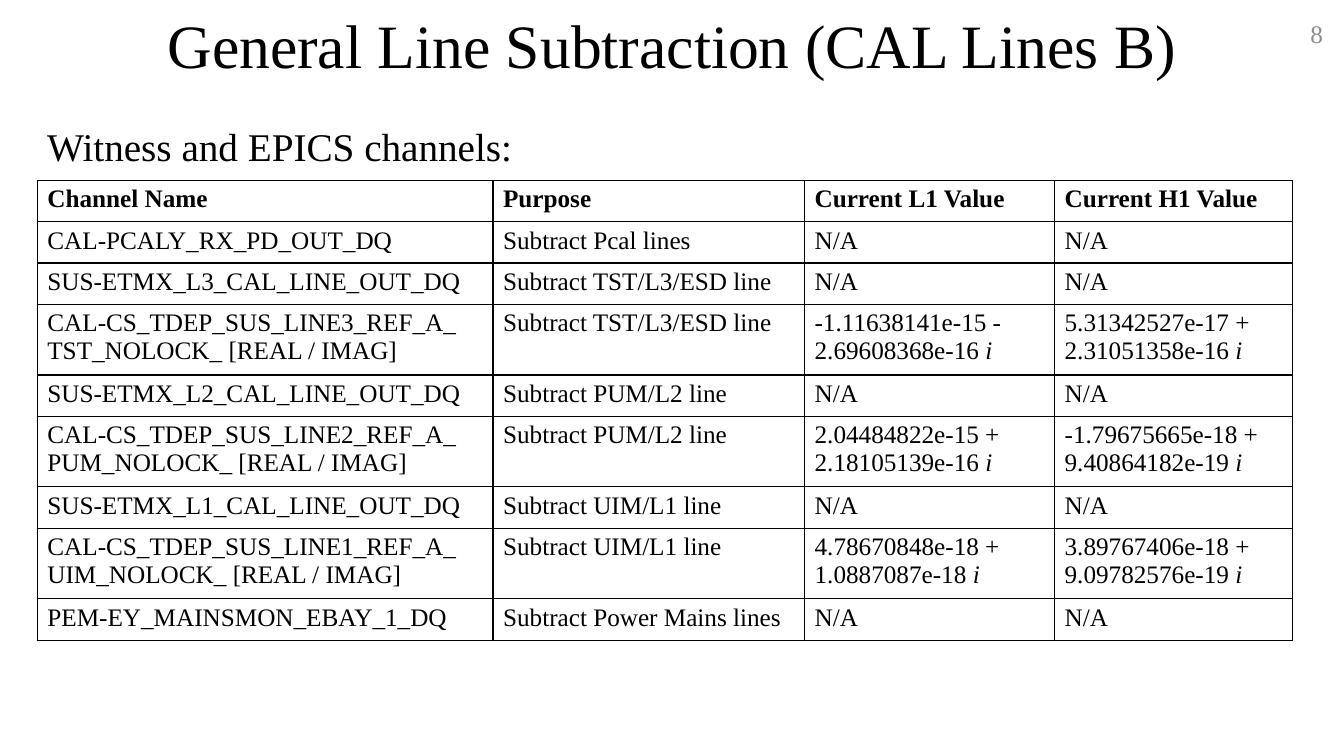
from lxml import etree
from pptx import Presentation
from pptx.dml.color import RGBColor
from pptx.enum.text import MSO_ANCHOR, PP_ALIGN
from pptx.oxml.ns import qn
from pptx.util import Inches, Pt

TOP, MIDDLE = MSO_ANCHOR.TOP, MSO_ANCHOR.MIDDLE
LEFT, CENTER, RIGHT = PP_ALIGN.LEFT, PP_ALIGN.CENTER, PP_ALIGN.RIGHT
FONT = "Times New Roman"
COLORS = {"text": "000000", "number": "8C8C8C", "border": "000000"}

COLUMN_WIDTHS = [4.52, 3.09, 2.48, 2.36]
ROW_HEIGHT = 0.41
IMAGINARY = " i"
NA = "N/A"
CHANNELS = [
    ("Channel Name", "Purpose", "Current L1 Value", "Current H1 Value"),
    ("CAL-PCALY_RX_PD_OUT_DQ", "Subtract Pcal lines", NA, NA),
    ("SUS-ETMX_L3_CAL_LINE_OUT_DQ", "Subtract TST/L3/ESD line", NA, NA),
    ("CAL-CS_TDEP_SUS_LINE3_REF_A_\nTST_NOLOCK_ [REAL / IMAG]",
     "Subtract TST/L3/ESD line",
     "-1.11638141e-15 - 2.69608368e-16 i", "5.31342527e-17 + 2.31051358e-16 i"),
    ("SUS-ETMX_L2_CAL_LINE_OUT_DQ", "Subtract PUM/L2 line", NA, NA),
    ("CAL-CS_TDEP_SUS_LINE2_REF_A_\nPUM_NOLOCK_ [REAL / IMAG]",
     "Subtract PUM/L2 line",
     "2.04484822e-15 + 2.18105139e-16 i", "-1.79675665e-18 + 9.40864182e-19 i"),
    ("SUS-ETMX_L1_CAL_LINE_OUT_DQ", "Subtract UIM/L1 line", NA, NA),
    ("CAL-CS_TDEP_SUS_LINE1_REF_A_\nUIM_NOLOCK_ [REAL / IMAG]",
     "Subtract UIM/L1 line",
     "4.78670848e-18 + 1.0887087e-18 i", "3.89767406e-18 + 9.09782576e-19 i"),
    ("PEM-EY_MAINSMON_EBAY_1_DQ", "Subtract Power Mains lines", NA, NA),
]


def add_run(p, text, size, color="text", bold=False, italic=False):
    r = p.add_run()
    r.text = text
    r.font.name = FONT
    r.font.size = Pt(size)
    r.font.bold = bold
    r.font.italic = italic
    r.font.color.rgb = RGBColor.from_string(COLORS[color])


def add_text(slide, box, text, size, color="text", align=LEFT, anchor=TOP, spacing=0.9):
    sp = slide.shapes.add_textbox(*map(Inches, box))
    tf = sp.text_frame
    tf.word_wrap = True
    tf.vertical_anchor = anchor
    p = tf.paragraphs[0]
    p.alignment = align
    p.line_spacing = spacing
    add_run(p, text, size, color)


def set_borders(cell):
    tc_pr = cell._tc.get_or_add_tcPr()
    for i, side in enumerate(("lnL", "lnR", "lnT", "lnB")):
        ln = etree.Element(qn(f"a:{side}"), w=str(Pt(1)))
        fill = etree.SubElement(ln, qn("a:solidFill"))
        etree.SubElement(fill, qn("a:srgbClr"), val=COLORS["border"])
        tc_pr.insert(i, ln)


def fill_cell(cell, text, bold):
    """Write one paragraph per line, with a closing imaginary unit in italics."""
    cell.fill.background()
    set_borders(cell)
    tf = cell.text_frame
    for i, line in enumerate(text.split("\n")):
        p = tf.add_paragraph() if i else tf.paragraphs[0]
        if line.endswith(IMAGINARY):
            add_run(p, line[:-1], 18)
            add_run(p, "i", 18, italic=True)
        else:
            add_run(p, line, 18, bold=bold)


def add_channel_table(slide, left, top):
    width, height = sum(COLUMN_WIDTHS), ROW_HEIGHT * len(CHANNELS)
    table = slide.shapes.add_table(
        len(CHANNELS), len(COLUMN_WIDTHS),
        Inches(left), Inches(top), Inches(width), Inches(height)).table
    table.horz_banding = False
    for column, column_width in zip(table.columns, COLUMN_WIDTHS):
        column.width = Inches(column_width)
    for i, values in enumerate(CHANNELS):
        table.rows[i].height = Inches(ROW_HEIGHT)
        for j, value in enumerate(values):
            fill_cell(table.cell(i, j), value, bold=i == 0)


def main():
    prs = Presentation()
    prs.slide_width, prs.slide_height = Inches(13.33), Inches(7.5)
    slide = prs.slides.add_slide(prs.slide_layouts[6])
    add_text(slide, (0.92, 0, 11.5, 0.96), "General Line Subtraction (CAL Lines B)", 44,
             align=CENTER, anchor=MIDDLE)
    add_text(slide, (0.37, 1.22, 12.96, 6.03), "Witness and EPICS channels:", 28)
    add_text(slide, (10.22, 0.13, 3, 0.4), "8", 18, "number", RIGHT, MIDDLE, spacing=1.0)
    add_channel_table(slide, 0.37, 1.79)
    prs.save("out.pptx")


if __name__ == "__main__":
    main()
